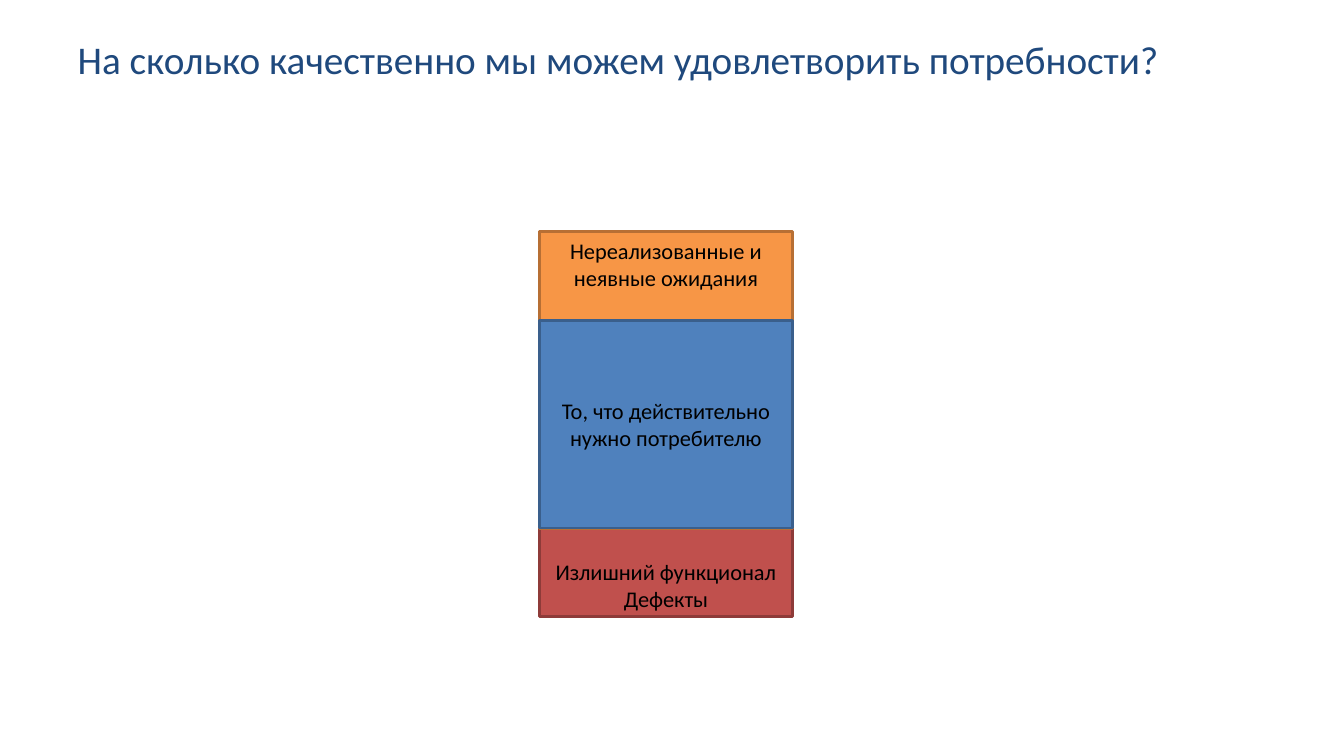
from dataclasses import dataclass

from pptx import Presentation
from pptx.dml.color import RGBColor
from pptx.enum.shapes import MSO_SHAPE
from pptx.enum.text import MSO_ANCHOR as Anchor, MSO_AUTO_SIZE as AutoSize, PP_ALIGN as Align
from pptx.slide import Slide
from pptx.text.text import TextFrame
from pptx.util import Inches, Pt


@dataclass(frozen=True)
class Theme:
    font: str = "Calibri"
    title_size: int = 28
    label_size: int = 16
    line_width: float = 2
    title: str = "1F497D"
    label: str = "000000"
    red: str = "C0504D"
    red_line: str = "8E3B39"
    orange: str = "F79646"
    orange_line: str = "B76F34"
    blue: str = "4F81BD"
    blue_line: str = "3A5F8C"


@dataclass(frozen=True)
class Block:
    lines: tuple[str, ...]
    top: float
    height: float
    fill: str
    line: str
    anchor: Anchor


THEME = Theme()
BLOCK_LEFT, BLOCK_WIDTH = 5.35, 2.51

# Expectations and product are equally tall; their overlap is the real need
EXPECTED_TOP, PRODUCT_TOP, FULL_HEIGHT = 2.3, 3.18, 2.94
OVERLAP = EXPECTED_TOP + FULL_HEIGHT - PRODUCT_TOP

BLOCKS = (
    Block(("Излишний функционал", "Дефекты"), PRODUCT_TOP, FULL_HEIGHT,
          THEME.red, THEME.red_line, Anchor.BOTTOM),
    Block(("Нереализованные и неявные ожидания",), EXPECTED_TOP, FULL_HEIGHT,
          THEME.orange, THEME.orange_line, Anchor.TOP),
    Block(("То, что действительно нужно потребителю",), PRODUCT_TOP, OVERLAP,
          THEME.blue, THEME.blue_line, Anchor.MIDDLE),
)


def write_text(frame: TextFrame, lines: tuple[str, ...], *, size: float, color: str,
               align: Align, anchor: Anchor) -> None:
    frame.word_wrap = True
    frame.auto_size = AutoSize.NONE
    frame.vertical_anchor = anchor
    for index, line in enumerate(lines):
        paragraph = frame.add_paragraph() if index else frame.paragraphs[0]
        paragraph.alignment = align
        run = paragraph.add_run()
        run.text = line
        run.font.name = THEME.font
        run.font.size = Pt(size)
        run.font.color.rgb = RGBColor.from_string(color)


def draw_block(slide: Slide, block: Block) -> None:
    shape = slide.shapes.add_shape(
        MSO_SHAPE.RECTANGLE, Inches(BLOCK_LEFT), Inches(block.top),
        Inches(BLOCK_WIDTH), Inches(block.height))
    shape.shadow.inherit = False
    shape.fill.solid()
    shape.fill.fore_color.rgb = RGBColor.from_string(block.fill)
    shape.line.color.rgb = RGBColor.from_string(block.line)
    shape.line.width = Pt(THEME.line_width)
    write_text(shape.text_frame, block.lines, size=THEME.label_size,
               color=THEME.label, align=Align.CENTER, anchor=block.anchor)


def draw_title(slide: Slide, text: str) -> None:
    title = slide.shapes.title
    title.left, title.top = Inches(0.67), Inches(0.3)
    title.width, title.height = Inches(12), Inches(1.25)
    write_text(title.text_frame, (text,), size=THEME.title_size,
               color=THEME.title, align=Align.LEFT, anchor=Anchor.TOP)


def main() -> None:
    presentation = Presentation()
    presentation.slide_width, presentation.slide_height = Inches(13.33), Inches(7.5)
    title_only = presentation.slide_layouts.get_by_name("Title Only")
    slide = presentation.slides.add_slide(title_only)

    # Title
    draw_title(slide, "На сколько качественно мы можем удовлетворить потребности?")

    # Overlapping blocks, back to front
    for block in BLOCKS:
        draw_block(slide, block)

    presentation.save("out.pptx")


if __name__ == "__main__":
    main()
